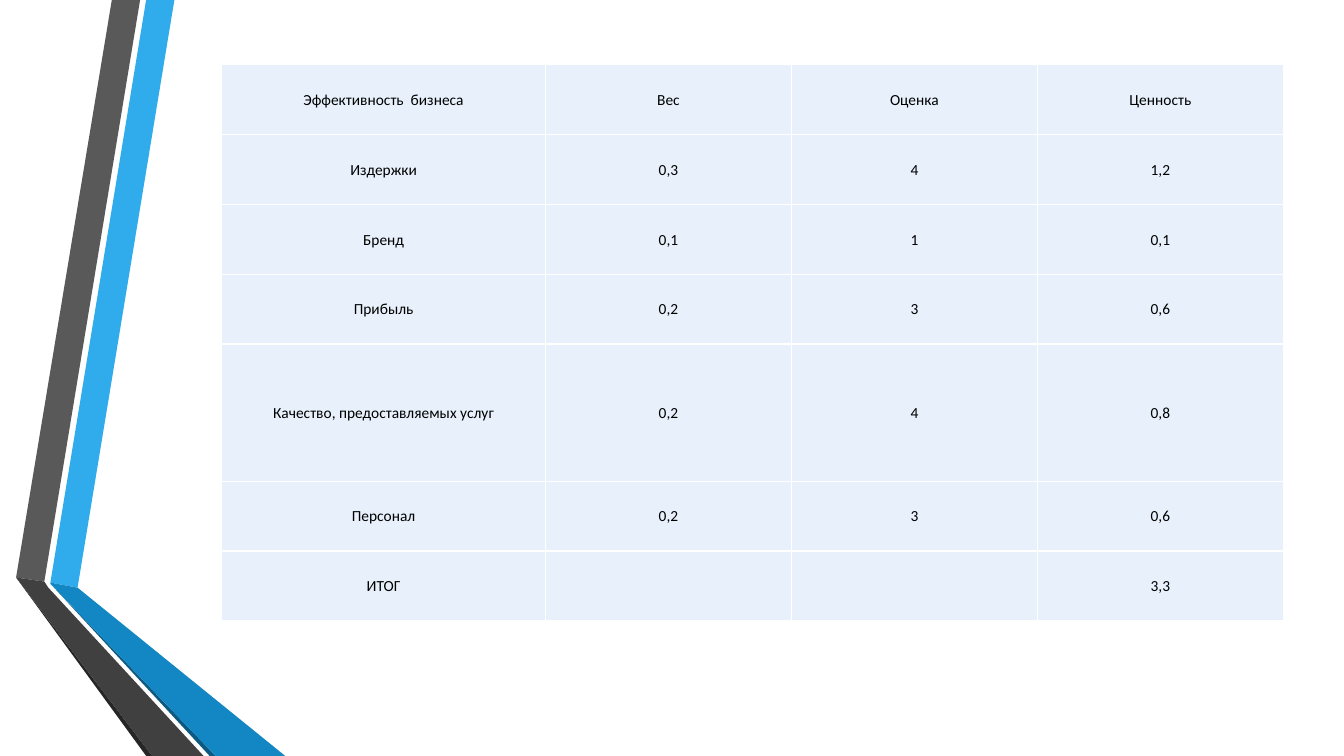
from dataclasses import dataclass

from lxml import etree
from pptx import Presentation
from pptx import util as u
from pptx.dml.color import RGBColor
from pptx.enum import text
from pptx.oxml import ns


@dataclass(frozen=True)
class Theme:
    font: str = "Calibri"
    size: int = 11
    ink: str = "000000"
    cell: str = "E8F1FB"
    border: str = "FFFFFF"
    border_width: int = 1
    blue: str = "30ACEC"
    blue_mid: str = "1287C3"
    blue_dark: str = "0C5A82"
    grey: str = "595959"
    grey_mid: str = "404040"
    grey_dark: str = "262626"


theme = Theme()
WIDTH, HEIGHT = 13.33, 7.5


def paint(fill, colour):
    fill.solid()
    fill.fore_color.rgb = RGBColor.from_string(colour)


def add_borders(cell):
    """Draw all four sides of a cell; call before filling it, as the schema wants lines first."""
    properties = cell._tc.get_or_add_tcPr()
    for side in ("lnL", "lnR", "lnT", "lnB"):
        line = etree.SubElement(properties, ns.qn(f"a:{side}"), w=str(u.Pt(theme.border_width)))
        solid = etree.SubElement(line, ns.qn("a:solidFill"))
        etree.SubElement(solid, ns.qn("a:srgbClr"), val=theme.border)


deck = Presentation()
deck.slide_width, deck.slide_height = u.Inches(WIDTH), u.Inches(HEIGHT)
page = deck.slides.add_slide(deck.slide_layouts[6])

# Folded ribbons: upper bands, then the shaded lower folds, in hundredths of an inch
bottom = round(HEIGHT * 100)
ribbons = [
    (theme.blue, [(50, 578), (77, 583), (173, 0), (145, 0)]),
    (theme.grey, [(139, 0), (111, 0), (16, 573), (44, 577)]),
    (theme.grey_dark, [(16, 573), (145, bottom), (151, bottom)]),
    (theme.blue_dark, [(50, 579), (208, bottom), (214, bottom)]),
    (theme.blue_mid, [(50, 578), (50, 579), (214, bottom), (283, bottom), (77, 583)]),
    (theme.grey_mid, [(202, bottom), (48, 583), (44, 577), (16, 573), (151, bottom)]),
]
for colour, corners in ribbons:
    outline = page.shapes.build_freeform(*corners[0], scale=u.Inches(0.01))
    outline.add_line_segments(corners[1:], close=True)
    ribbon = outline.convert_to_shape()
    ribbon.shadow.inherit = False
    ribbon.line.fill.background()
    paint(ribbon.fill, colour)

# Score table
scores = [
    ("Эффективность  бизнеса", "Вес", "Оценка", "Ценность"),
    ("Издержки", "0,3", "4", "1,2"),
    ("Бренд", "0,1", "1", "0,1"),
    ("Прибыль", "0,2", "3", "0,6"),
    ("Качество, предоставляемых услуг", "0,2", "4", "0,8"),
    ("Персонал", "0,2", "3", "0,6"),
    ("ИТОГ", "", "", "3,3"),
]
table_height, tall_row = 5.52, 1.36
plain_row = (table_height - tall_row) / (len(scores) - 1)
row_heights = [plain_row] * 4 + [tall_row] + [plain_row] * 2
column_widths = [3.21] + [2.44] * 3
cell_format = {
    "vertical_anchor": text.MSO_ANCHOR.MIDDLE,
    "margin_left": u.Inches(0.01),
    "margin_right": u.Inches(0.01),
    "margin_top": u.Inches(0.01),
    "margin_bottom": 0,
}
font_format = {"name": theme.font, "size": u.Pt(theme.size), "bold": False}

table = page.shapes.add_table(
    len(scores), len(column_widths), u.Inches(2.2), u.Inches(0.64),
    u.Inches(sum(column_widths)), u.Inches(table_height),
).table
table.first_row = table.horz_banding = False
for column, width in zip(table.columns, column_widths):
    column.width = u.Inches(width)

for row, height, values in zip(table.rows, row_heights, scores):
    row.height = u.Inches(height)
    for cell, value in zip(row.cells, values):
        add_borders(cell)
        paint(cell.fill, theme.cell)
        for name, setting in cell_format.items():
            setattr(cell, name, setting)
        if not value:
            continue
        para = cell.text_frame.paragraphs[0]
        para.alignment = text.PP_ALIGN.CENTER
        span = para.add_run()
        span.text = value
        for name, setting in font_format.items():
            setattr(span.font, name, setting)
        span.font.color.rgb = RGBColor.from_string(theme.ink)

deck.save("out.pptx")
